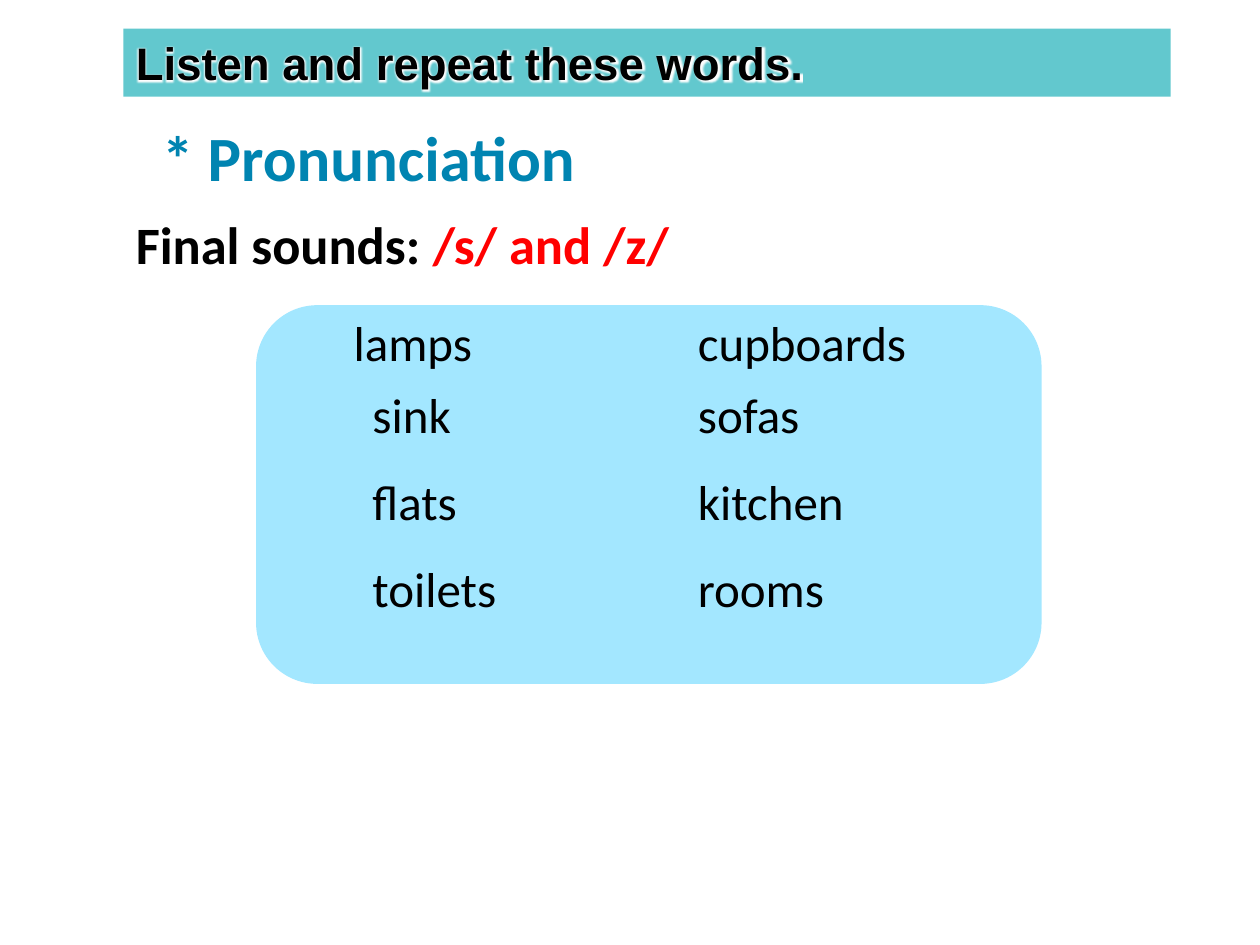
from lxml import etree
from pptx import Presentation
from pptx import util as u
from pptx.dml.color import RGBColor
from pptx.enum import shapes, text
from pptx.oxml.ns import qn

# Content
INSTRUCTION = "Listen and repeat these words."
HEADING = "* Pronunciation"
SOUNDS = [("Final sounds: ", "ink"), ("/s/ and /z/", "accent")]
WORD_ROWS = [("lamps", "cupboards"), ("sink", "sofas"),
             ("flats", "kitchen"), ("toilets", "rooms")]

THEME = {
    "ink": "000000", "accent": "FF0000", "heading": "0084B1",
    "banner": "62C8CE", "panel": "A3E7FF", "glow": "FFFFFF",
    "banner_font": "Arial", "font": "Calibri",
    "banner_size": 26, "heading_size": 36, "sounds_size": 30, "word_size": 28,
}

# Word grid, in cm
COLUMN_LEFTS = (7.26, 13.82)
FIRST_WORD_LEFT = 6.88
ROW_TOPS = (6.17, 7.62, 9.38, 11.14)
WORD_BOX = (4.85, 1.45)


def colour(key):
    return RGBColor.from_string(THEME[key])


def add_panel(slide, kind, box, fill, outline=False):
    panel = slide.shapes.add_shape(kind, *map(u.Cm, box))
    panel.shadow.inherit = False
    panel.fill.solid()
    panel.fill.fore_color.rgb = colour(fill)
    if outline:
        panel.line.color.rgb = colour(fill)
        panel.line.width = u.Pt(1)
    else:
        panel.line.fill.background()
    return panel


def write(shape, runs, size, font="font", bold=False, align=text.PP_ALIGN.LEFT):
    frame = shape.text_frame
    frame.word_wrap = True
    paragraph = frame.paragraphs[0]
    paragraph.alignment = align
    for words, ink in runs:
        run = paragraph.add_run()
        run.text = words
        run.font.name = THEME[font]
        run.font.size = u.Pt(THEME[size])
        run.font.bold = bold
        run.font.color.rgb = colour(ink)
    return paragraph


def add_text(slide, box, runs, size, **style):
    write(slide.shapes.add_textbox(*map(u.Cm, box)), runs, size, **style)


def add_glow(run):
    effects = etree.Element(qn("a:effectLst"))
    glow = etree.SubElement(effects, qn("a:glow"), rad=str(u.Pt(4)))
    etree.SubElement(glow, qn("a:srgbClr"), val=THEME["glow"])
    run.font._element.find(qn("a:solidFill")).addnext(effects)


def main():
    deck = Presentation()
    deck.slide_width, deck.slide_height = u.Cm(25.4), u.Cm(19.05)
    slide = deck.slides.add_slide(deck.slide_layouts[6])

    # Instruction banner
    banner = add_panel(slide, shapes.MSO_SHAPE.RECTANGLE,
                       (2.49, 0.58, 21.11, 1.37), "banner")
    instruction = write(banner, [(INSTRUCTION, "ink")], "banner_size",
                        font="banner_font", bold=True)
    add_glow(instruction.runs[0])

    # Word panel
    word_panel = add_panel(slide, shapes.MSO_SHAPE.ROUNDED_RECTANGLE,
                           (5.18, 6.17, 15.8, 7.6), "panel", outline=True)
    word_panel.adjustments[0] = 0.16

    # Words, row by row
    for row, (top, words) in enumerate(zip(ROW_TOPS, WORD_ROWS)):
        for column, (left, word) in enumerate(zip(COLUMN_LEFTS, words)):
            if row == column == 0:
                left = FIRST_WORD_LEFT
            add_text(slide, (left, top, *WORD_BOX), [(word, "ink")], "word_size")

    # Heading and sounds
    centred = {"bold": True, "align": text.PP_ALIGN.CENTER}
    add_text(slide, (2.49, 2.26, 9.88, 1.8), [(HEADING, "heading")],
             "heading_size", **centred)
    add_text(slide, (2.44, 4.14, 11.35, 1.55), SOUNDS, "sounds_size", **centred)

    deck.save("out.pptx")


if __name__ == "__main__":
    main()
